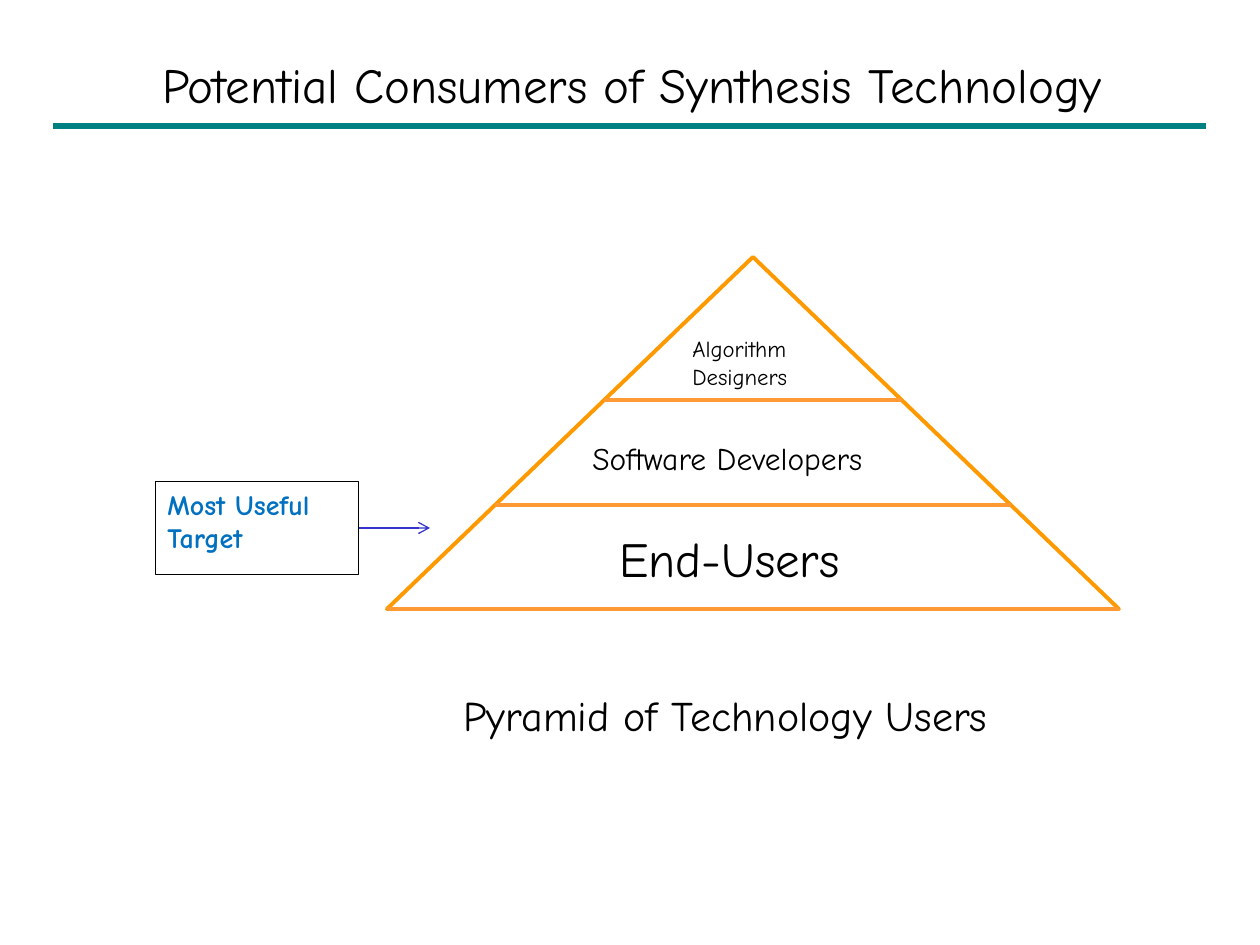
from dataclasses import dataclass

from lxml import etree
from pptx import Presentation
from pptx.dml.color import RGBColor
from pptx.enum.shapes import MSO_CONNECTOR, MSO_SHAPE
from pptx.enum.text import MSO_ANCHOR, MSO_AUTO_SIZE, PP_ALIGN
from pptx.oxml.ns import qn
from pptx.shapes.autoshape import Shape
from pptx.shapes.connector import Connector
from pptx.slide import Slide
from pptx.text.text import TextFrame
from pptx.util import Emu, Pt

STRAIGHT = MSO_CONNECTOR.STRAIGHT
RECTANGLE = MSO_SHAPE.RECTANGLE
TRIANGLE = MSO_SHAPE.ISOSCELES_TRIANGLE
LEFT, CENTER = PP_ALIGN.LEFT, PP_ALIGN.CENTER
TOP, MIDDLE = MSO_ANCHOR.TOP, MSO_ANCHOR.MIDDLE
NO_AUTOFIT = MSO_AUTO_SIZE.NONE

BLACK = RGBColor(0x00, 0x00, 0x00)
WHITE = RGBColor(0xFF, 0xFF, 0xFF)
TEAL = RGBColor(0x00, 0x80, 0x80)
ORANGE = RGBColor(0xFF, 0x99, 0x00)
LIGHT_ORANGE = RGBColor(0xFF, 0x99, 0x33)
BLUE = RGBColor(0x00, 0x70, 0xC0)
ARROW_BLUE = RGBColor(0x33, 0x33, 0xCC)

FONT = "Comic Neue"
PX_PER_INCH = 126


@dataclass(frozen=True)
class Box:
    x: int
    y: int
    w: int
    h: int


@dataclass(frozen=True)
class Label:
    box: Box
    lines: tuple[str, ...]
    size: int
    color: RGBColor = BLACK
    border: RGBColor = WHITE
    bold: bool = False
    spacing: float = 1.0


PYRAMID = Box(387, 257, 732, 352)
LEVEL_BOTTOMS = (400, 505, 609)
TIERS = (
    Label(Box(607, 522, 291, 89), ("End-Users",), 28),
    Label(Box(680, 329, 131, 82), ("Algorithm", "Designers"), 13),
    Label(Box(580, 427, 343, 78), ("Software Developers",), 18, spacing=1.15),
)
TARGET = Label(Box(155, 481, 204, 94), ("Most Useful Target",), 16,
               color=BLUE, border=BLACK, bold=True)


def px(n: float) -> Emu:
    return Emu(round(n * 914400 / PX_PER_INCH))


def place(box: Box) -> tuple[Emu, Emu, Emu, Emu]:
    return px(box.x), px(box.y), px(box.w), px(box.h)


def write(tf: TextFrame, lines: tuple[str, ...], size: int,
          color: RGBColor = BLACK, bold: bool = False,
          align: PP_ALIGN = LEFT, anchor: MSO_ANCHOR = TOP,
          spacing: float = 1.0) -> None:
    tf.word_wrap = True
    tf.auto_size = NO_AUTOFIT
    tf.vertical_anchor = anchor
    for i, line in enumerate(lines):
        p = tf.add_paragraph() if i else tf.paragraphs[0]
        p.alignment = align
        p.line_spacing = spacing
        r = p.add_run()
        r.text = line
        r.font.name = FONT
        r.font.size = Pt(size)
        r.font.bold = bold
        r.font.color.rgb = color


def add_outlined(s: Slide, preset: MSO_SHAPE, box: Box,
                 border: RGBColor, width: float) -> Shape:
    sp = s.shapes.add_shape(preset, *place(box))
    sp.shadow.inherit = False
    sp.fill.solid()
    sp.fill.fore_color.rgb = WHITE
    sp.line.color.rgb = border
    sp.line.width = Pt(width)
    return sp


def add_label(s: Slide, label: Label) -> Shape:
    sp = add_outlined(s, RECTANGLE, label.box, label.border, 0.5)
    write(sp.text_frame, label.lines, label.size, label.color,
          label.bold, spacing=label.spacing)
    return sp


def add_line(s: Slide, x1: float, x2: float, y: int,
             color: RGBColor, width: float) -> Connector:
    line = s.shapes.add_connector(STRAIGHT, px(x1), px(y), px(x2), px(y))
    line.line.color.rgb = color
    line.line.width = Pt(width)
    etree.SubElement(line._element.spPr, qn("a:effectLst"))
    return line


def add_pyramid(s: Slide) -> None:
    add_outlined(s, TRIANGLE, PYRAMID, ORANGE, 2.25)
    for tier in TIERS:
        add_label(s, tier)
    center = PYRAMID.x + PYRAMID.w / 2
    for y in LEVEL_BOTTOMS:
        half = PYRAMID.w / 2 * (y - PYRAMID.y) / PYRAMID.h
        add_line(s, center - half, center + half, y, LIGHT_ORANGE, 2.25)


def add_target(s: Slide) -> None:
    sp = add_label(s, TARGET)
    box = TARGET.box
    arrow = add_line(s, box.x + box.w, 430, box.y + box.h // 2,
                     ARROW_BLUE, 0.75)
    arrow.begin_connect(sp, 3)
    etree.SubElement(arrow.line._get_or_add_ln(), qn("a:tailEnd"), type="arrow")


def main() -> None:
    prs = Presentation()
    prs.slide_width, prs.slide_height = px(1260), px(945)
    s = prs.slides.add_slide(prs.slide_layouts[5])

    title = s.shapes.title
    title.left, title.top, title.width, title.height = place(Box(49, 42, 1166, 84))
    write(title.text_frame, ("Potential Consumers of Synthesis Technology",),
          28, align=CENTER, anchor=MIDDLE)
    add_line(s, 53, 1206, 126, TEAL, 4)

    add_pyramid(s)
    add_target(s)

    caption = s.shapes.add_textbox(*place(Box(451, 683, 617, 63)))
    write(caption.text_frame, ("Pyramid of Technology Users",), 24)

    prs.save("out.pptx")


if __name__ == "__main__":
    main()
